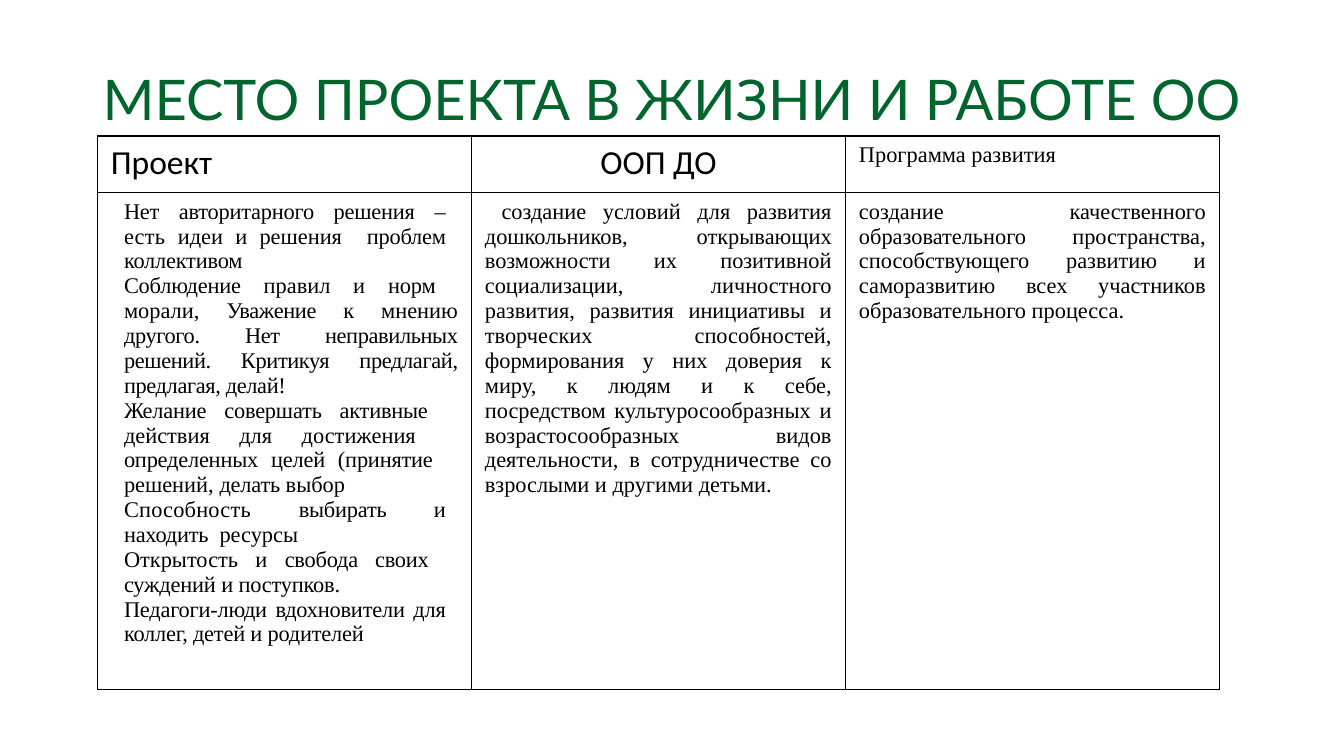
from lxml.etree import SubElement
from pptx import Presentation
from pptx.dml.color import RGBColor
from pptx.enum.text import MSO_ANCHOR, MSO_AUTO_SIZE, PP_ALIGN as Align
from pptx.oxml import parse_xml
from pptx.oxml.ns import nsdecls, qn
from pptx.util import Cm, Pt

GREEN = RGBColor(0x00, 0x64, 0x2D)
BLACK = RGBColor(0x00, 0x00, 0x00)
SERIF = "Times New Roman"


def add_run(paragraph, text, font, size, color=BLACK, spacing=0):
    run = paragraph.add_run()
    run.text = text
    run.font.name = font
    run.font.size = Pt(size)
    run.font.color.rgb = color
    run.font.bold = False
    if spacing:
        run.font._element.set("spc", str(round(spacing * 100)))


def add_borders(cell):
    properties = cell._tc.get_or_add_tcPr()
    for index, side in enumerate(("lnL", "lnR", "lnT", "lnB")):
        properties.insert(index, parse_xml(
            f'<a:{side} {nsdecls("a")} w="12700"><a:solidFill>'
            f'<a:srgbClr val="{BLACK}"/></a:solidFill></a:{side}>'))


presentation = Presentation()
presentation.slide_width = Cm(25.4)
presentation.slide_height = Cm(14.29)
slide = presentation.slides.add_slide(presentation.slide_layouts[5])

# Title
title = slide.shapes.title
title.left, title.top, title.width, title.height = Cm(0.99), Cm(1.37), Cm(23.42), Cm(1.14)
frame = title.text_frame
frame.margin_left = frame.margin_right = frame.margin_top = frame.margin_bottom = 0
frame.vertical_anchor = MSO_ANCHOR.TOP
frame.auto_size = MSO_AUTO_SIZE.NONE
frame.word_wrap = True
paragraph = frame.paragraphs[0]
paragraph.alignment = Align.CENTER
paragraph.line_spacing = 0.9
add_run(paragraph, "МЕСТО ПРОЕКТА В ЖИЗНИ И РАБОТЕ ОО", "Lato", 30, GREEN)

# Table grid
table = slide.shapes.add_table(2, 3, Cm(1.84), Cm(2.57), Cm(21.21), Cm(10.46)).table
table.first_row = table.horz_banding = False
for column in table.columns:
    column.width = Cm(7.07)
table.rows[0].height = Cm(1.07)
table.rows[1].height = Cm(9.39)
for cell in table.iter_cells():
    cell.fill.background()
    add_borders(cell)

# Header row
headers = [
    ("Проект", "Calibri", 18, Align.LEFT),
    ("ООП ДО", "Calibri", 18, Align.CENTER),
    ("Программа развития", SERIF, 12, Align.LEFT),
]
for column, (text, font, size, alignment) in enumerate(headers):
    paragraph = table.cell(0, column).text_frame.paragraphs[0]
    paragraph.alignment = alignment
    add_run(paragraph, text, font, size)

# Project column: right indent in cm, then runs with letter spacing in points
project = [
    (0.23, [("Нет авторитарного решения ", -0.1), ("– ", 0), ("есть ", 0.1),
            ("идеи и решения  ", 0), ("проблем коллективом", -0.1)]),
    (0, [("Соблюдение ", -0.1), ("правил и ", 0), ("норм  ", -0.1), ("морали, ", 0),
         ("Уважение ", -0.2), ("к мнению ", 0),
         ("другого. Нет неправильных решений. Критикуя предлагай, предлагая, делай!", -0.2)]),
    (0.23, [("Желание совершать активные  ", -0.1), ("действия для достижения  ", 0),
            ("определенных целей (принятие  ", -0.1), ("решений, ", 0),
            ("делать ", -0.1), ("выбор", 0)]),
    (0.23, [("Способность ", 0.1), ("выбирать ", -0.1), ("и ", 0),
            ("находить  ", -0.1), ("ресурсы", 0)]),
    (0.23, [("Открытость и ", 0), ("свобода своих  суждений ", -0.1), ("и", 0),
            (" поступков. ", -0.1)]),
    (0.23, [("Педагоги-люди вдохновители для коллег, детей и родителей", -0.1)]),
]
frame = table.cell(1, 0).text_frame
for index, (right_indent, runs) in enumerate(project):
    paragraph = frame.add_paragraph() if index else frame.paragraphs[0]
    paragraph.alignment = Align.JUSTIFY
    properties = paragraph._p.get_or_add_pPr()
    properties.set("marL", str(Cm(0.25)))
    properties.set("marR", str(Cm(right_indent)))
    for text, spacing in runs:
        add_run(paragraph, text, SERIF, 12, spacing=spacing)

# Programme columns
programmes = [
    " создание условий для развития дошкольников, открывающих возможности их позитивной "
    "социализации, личностного развития, развития инициативы и творческих способностей, "
    "формирования у них доверия к миру, к людям и к себе, посредством культуросообразных "
    "и возрастосообразных видов деятельности, в сотрудничестве со взрослыми и другими детьми.",
    "создание качественного образовательного пространства, способствующего развитию "
    "и саморазвитию всех участников образовательного процесса. ",
]
for column, text in enumerate(programmes, start=1):
    paragraph = table.cell(1, column).text_frame.paragraphs[0]
    paragraph.alignment = Align.JUSTIFY
    add_run(paragraph, text, SERIF, 12)

presentation.save("out.pptx")
